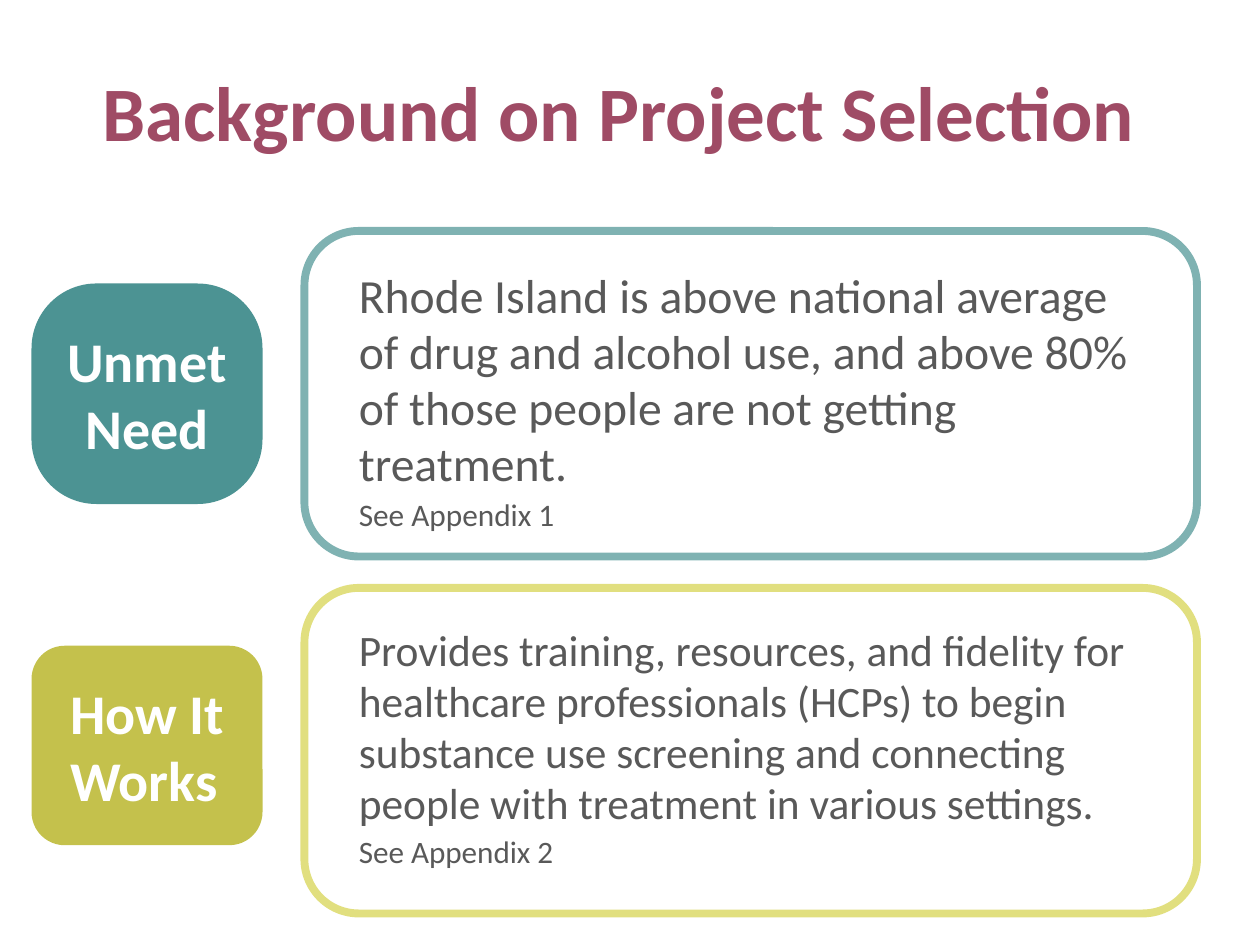
from pptx import Presentation
from pptx.dml.color import RGBColor as Rgb
from pptx.enum.shapes import MSO_SHAPE as Shape
from pptx.enum.text import MSO_ANCHOR as Anchor, PP_ALIGN as Align
from pptx.oxml.xmlchemy import OxmlElement
from pptx.util import Pt

FONT = "Calibri"
COLORS = {
    "title": "9F4B65",
    "body": "595959",
    "label": "FFFFFF",
    "teal": "006666",
    "teal_line": "006666",
    "olive": "ACA800",
    "olive_line": "C5C000",
}
SECTIONS = [
    {
        "box": (18, 132, 666, 186),
        "label": "Unmet Need",
        "label_height": 126,
        "label_shift": 30,
        "label_align": Align.CENTER,
        "label_indent": 7.2,
        "corner": 0.294,
        "color": "teal",
        "lines": [
            ("Rhode Island is above national average of drug and alcohol use, "
             "and above 80% of those people are not getting treatment.", 27.2),
            ("See Appendix 1", 17.9),
        ],
    },
    {
        "box": (18, 336, 666, 186),
        "label": "How It Works",
        "label_height": 114,
        "label_shift": 33,
        "label_align": Align.LEFT,
        "label_indent": 16.5,
        "corner": 0.1667,
        "color": "olive",
        "lines": [
            ("Provides training, resources, and fidelity for healthcare "
             "professionals (HCPs) to begin substance use screening and "
             "connecting people with treatment in various settings.", 24.8),
            ("See Appendix 2", 17.8),
        ],
    },
]


def set_values(target, values):
    for name, value in values.items():
        setattr(target, name, value)


def set_color(fill, color, opacity):
    """Make a fill solid, with opacity in percent."""
    fill.solid()
    fill.fore_color.rgb = Rgb.from_string(COLORS[color])
    alpha = OxmlElement("a:alpha")
    alpha.set("val", str(opacity * 1000))
    fill._xPr.find(".//{*}srgbClr").append(alpha)


def add_span(para, text, size, color, bold=False):
    span = para.add_run()
    span.text = text
    set_values(span.font, {"name": FONT, "size": Pt(size), "bold": bold})
    span.font.color.rgb = Rgb.from_string(COLORS[color])


def add_round_box(page, box, corner):
    shape = page.shapes.add_shape(Shape.ROUNDED_RECTANGLE, *map(Pt, box))
    shape.adjustments[0] = corner
    shape.shadow.inherit = False
    return shape


def add_title(page, box, text):
    title = page.shapes.title
    set_values(title, dict(zip(("left", "top", "width", "height"), map(Pt, box))))
    set_values(title.text_frame, {"vertical_anchor": Anchor.MIDDLE, "word_wrap": True})
    para = title.text_frame.paragraphs[0]
    para.alignment = Align.CENTER
    add_span(para, text, 44, "title", True)


def add_label(page, box, section):
    label = add_round_box(page, box, section["corner"])
    set_color(label.fill, section["color"], 70)
    label.line.fill.background()
    set_values(label.text_frame, {
        "word_wrap": True,
        "vertical_anchor": Anchor.MIDDLE,
        "margin_left": Pt(section["label_indent"]),
    })
    para = label.text_frame.paragraphs[0]
    para.alignment = section["label_align"]
    add_span(para, section["label"], 32, "label", True)


def add_panel(page, box, section):
    """Outlined box with a text box set inside it."""
    left, top, width, height = box
    panel = add_round_box(page, box, 0.1667)
    panel.fill.background()
    panel.line.width = Pt(4.5)
    set_color(panel.line.fill, section["color"] + "_line", 50)

    frame = page.shapes.add_textbox(
        Pt(left + 24), Pt(top + 18), Pt(width - 48), Pt(height - 42)).text_frame
    frame.word_wrap = True
    for index, (text, size) in enumerate(section["lines"]):
        para = frame.add_paragraph() if index else frame.paragraphs[0]
        set_values(para, {"space_before": Pt(2.5), "line_spacing": 0.98})
        add_span(para, text, size, "body")


def add_section(page, section):
    left, top, width, height = section["box"]
    label_width, panel_shift = 132, 156
    add_label(page, (left, top + section["label_shift"], label_width,
                     section["label_height"]), section)
    add_panel(page, (left + panel_shift, top, width - panel_shift, height), section)


def main():
    deck = Presentation()
    set_values(deck, {"slide_width": Pt(720), "slide_height": Pt(540)})
    page = deck.slides.add_slide(deck.slide_layouts[5])
    add_title(page, (30, 18, 648, 90), "Background on Project Selection")
    for section in SECTIONS:
        add_section(page, section)
    deck.save("out.pptx")


if __name__ == "__main__":
    main()
